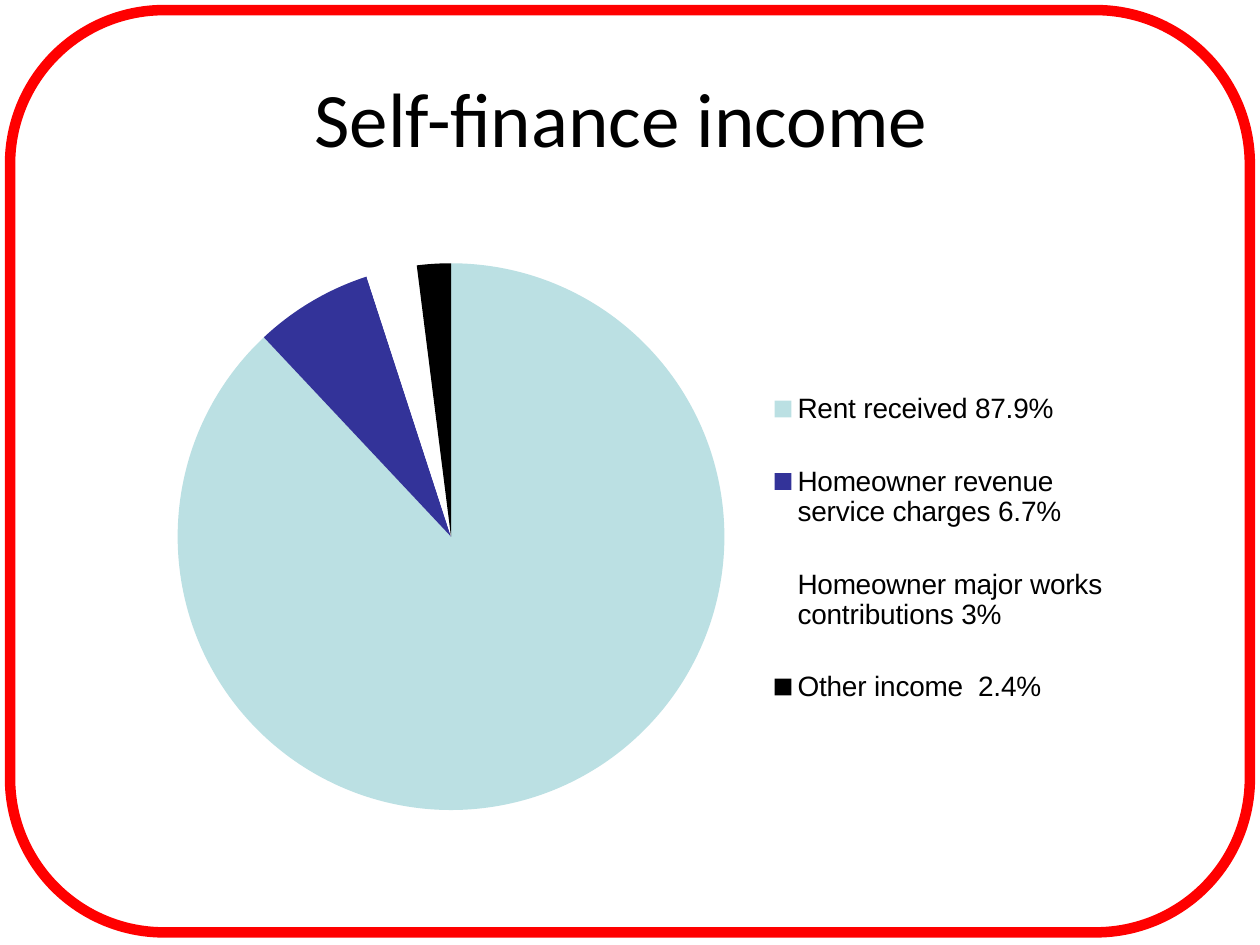
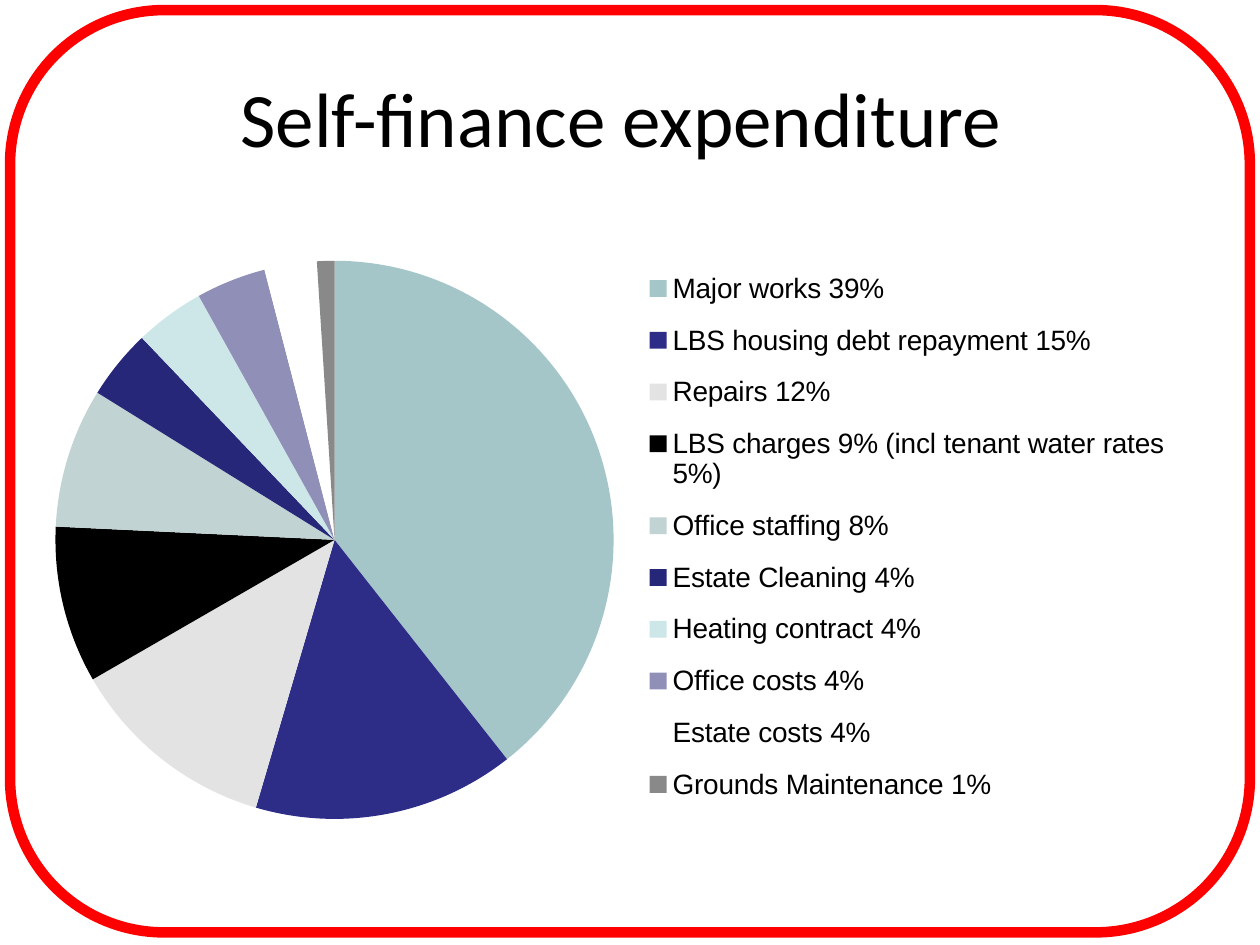
from lxml import etree
from pptx import Presentation
from pptx import util as u
from pptx.chart import data as chart_data
from pptx.dml import color
from pptx.enum import chart as charts, shapes, text

COLOURS = {
    "frame": "FF0000", "ink": "000000", "white": "FFFFFF",
    "pale teal": "BBE0E3", "indigo": "333399",
    "teal": "A5C6C9", "deep indigo": "2D2D87", "light grey": "E3E3E3",
    "grey teal": "C1D3D3", "navy": "272779", "ice": "CDE7E8",
    "lavender": "8F8FB8", "grey": "898989",
}

SLIDES = [
    {
        "title": "Self-finance income ",
        "area": (0.83, 1.96, 8.35, 4.62),
        "plot": (1.41, 2.09, 4.34, 4.34),
        "legend": (5.99, 2.79, 2.92, 3.12),
        "slices": [
            ("Rent received 87.9%", 88, "pale teal"),
            ("Homeowner revenue service charges 6.7%", 7, "indigo"),
            ("Homeowner major works contributions 3%", 3, "white"),
            ("Other income  2.4%", 2, "ink"),
        ],
    },
    {
        "title": "Self-finance expenditure ",
        "area": (0, 1.78, 9.37, 5.12),
        "plot": (0.44, 2.07, 4.43, 4.43),
        "legend": (5.09, 2, 4.22, 4.52),
        "slices": [
            ("Major works 39%", 39, "teal"),
            ("LBS housing debt repayment 15%", 15, "deep indigo"),
            ("Repairs 12%", 12, "light grey"),
            ("LBS charges 9% (incl tenant water rates 5%)", 9, "ink"),
            ("Office staffing 8%", 8, "grey teal"),
            ("Estate Cleaning 4%", 4, "navy"),
            ("Heating contract 4%", 4, "ice"),
            ("Office costs 4%", 4, "lavender"),
            ("Estate costs 4%", 3, "white"),
            ("Grounds Maintenance 1%", 1, "grey"),
        ],
    },
]

CHART_NS = "http://schemas.openxmlformats.org/drawingml/2006/chart"


def rgb(name):
    return color.RGBColor.from_string(COLOURS[name])


def inches(lengths):
    return [u.Inches(length) for length in lengths]


def format_font(font, face="Arial", size=10, colour="ink"):
    font.name = face
    font.size = u.Pt(size)
    font.color.rgb = rgb(colour)


def write_text(box, content, align=text.PP_ALIGN.CENTER, **font_format):
    box.text_frame.vertical_anchor = text.MSO_ANCHOR.MIDDLE
    para = box.text_frame.paragraphs[0]
    para.alignment = align
    span = para.add_run()
    span.text = content
    format_font(span.font, **font_format)


def share_of(area, bounds):
    left, top, width, height = area
    x, y, w, h = bounds
    return (x - left) / width, (y - top) / height, w / width, h / height


def place_part(part, index, shares, inner=False):
    for old in part.findall(f"{{{CHART_NS}}}layout"):
        part.remove(old)
    layout = etree.Element(f"{{{CHART_NS}}}layout")
    manual = etree.SubElement(layout, f"{{{CHART_NS}}}manualLayout")
    settings = [("layoutTarget", "inner")] if inner else []
    settings += [("xMode", "edge"), ("yMode", "edge")]
    settings += zip("xywh", shares)
    for tag, value in settings:
        etree.SubElement(manual, f"{{{CHART_NS}}}{tag}").set("val", str(value))
    part.insert(index, layout)


def add_frame(deck, page):
    frame = page.shapes.add_shape(
        shapes.MSO_SHAPE.ROUNDED_RECTANGLE, *inches((0.08, 0.08, 9.84, 7.32)))
    frame.adjustments[0] = 0.167
    frame.shadow.inherit = False
    frame.fill.background()
    frame.line.color.rgb = rgb("frame")
    frame.line.width = u.Pt(6)
    deck.slide_master.shapes.element.insert(2, frame.element)


def add_pie(page, content):
    area = content["area"]
    labels, values, colours = zip(*content["slices"])
    figures = chart_data.CategoryChartData()
    figures.categories = labels
    figures.add_series("Series 1", values)
    chart = page.shapes.add_chart(
        charts.XL_CHART_TYPE.PIE, *inches(area), figures).chart
    chart.has_title = False
    format_font(chart.font)
    plot = chart.plots[0]
    plot.vary_by_categories = True
    for index, colour in enumerate(colours):
        fill = plot.series[0].points[index].format.fill
        fill.solid()
        fill.fore_color.rgb = rgb(colour)
    chart.has_legend = True
    legend = chart.legend
    legend.position = charts.XL_LEGEND_POSITION.RIGHT
    legend.include_in_layout = False
    format_font(legend.font, size=16)
    place_part(legend._element, 1, share_of(area, content["legend"]))
    place_part(plot._element.getparent(), 0, share_of(area, content["plot"]), inner=True)


def main():
    deck = Presentation()
    deck.slide_width, deck.slide_height = inches((10, 7.5))
    for number, content in enumerate(SLIDES):
        page = deck.slides.add_slide(deck.slide_layouts[5])
        if number == 0:
            add_frame(deck, page)
        title = page.shapes.title
        title.left, title.top, title.width, title.height = inches((0.5, 0.3, 9, 1.25))
        write_text(title, content["title"], face="Calibri", size=44)
        add_pie(page, content)
    deck.save("out.pptx")


if __name__ == "__main__":
    main()
